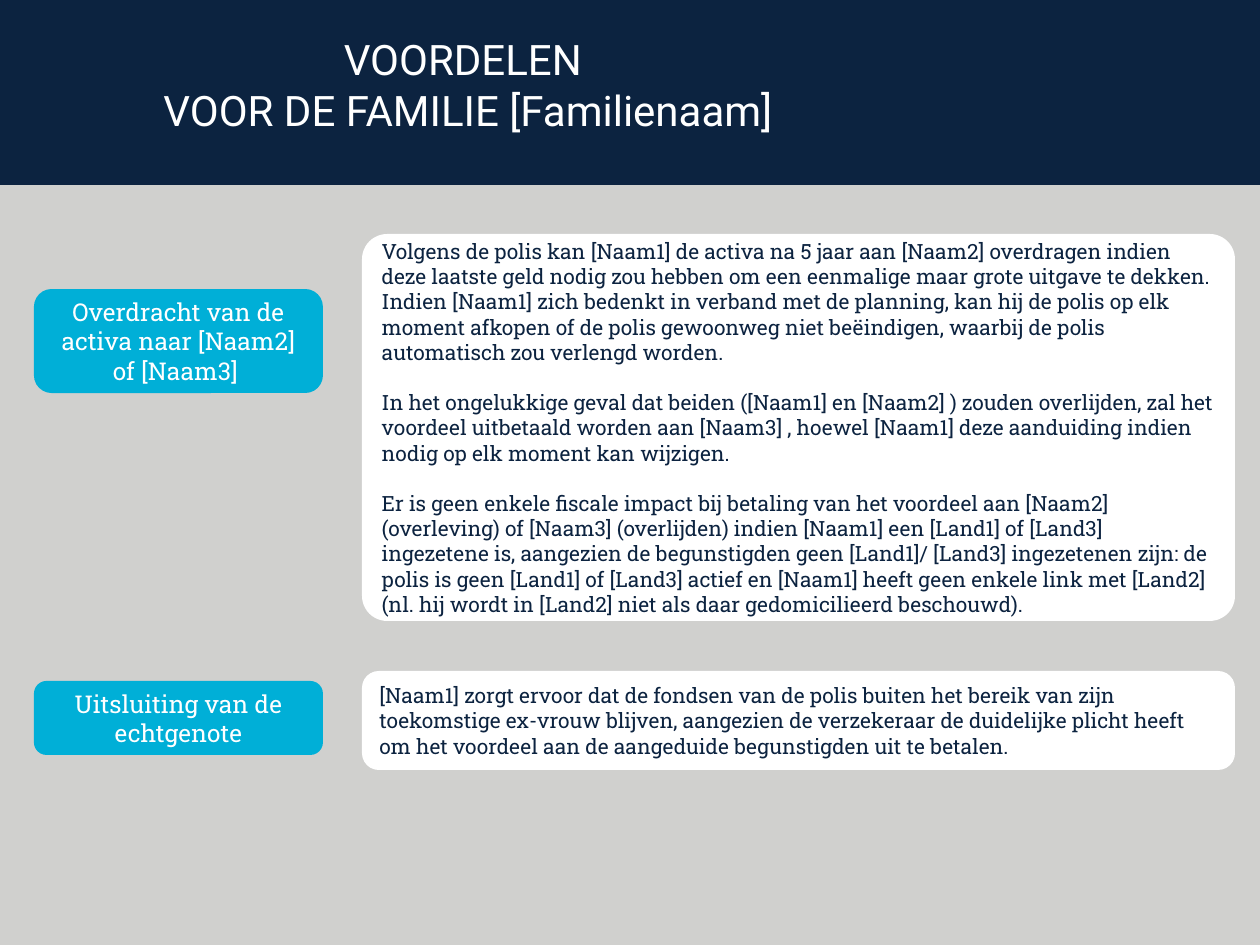
from dataclasses import dataclass

from pptx import Presentation
from pptx.dml.color import RGBColor
from pptx.enum.shapes import MSO_SHAPE
from pptx.enum.text import MSO_ANCHOR, PP_ALIGN
from pptx.util import Emu, Pt

RECTANGLE = MSO_SHAPE.RECTANGLE
ROUNDED = MSO_SHAPE.ROUNDED_RECTANGLE
MIDDLE, TOP = MSO_ANCHOR.MIDDLE, MSO_ANCHOR.TOP
LEFT, CENTER = PP_ALIGN.LEFT, PP_ALIGN.CENTER

EMU_PER_PX = 914400 / 126
COLORS = {
    "background": "D0D0CE",
    "navy": "0C2340",
    "cyan": "00AFD7",
    "white": "FFFFFF",
}
LABEL_LEFT, LABEL_WIDTH = 34, 289
DETAIL_LEFT, DETAIL_WIDTH = 362, 873
PARAGRAPH_GAP = 14.4


@dataclass(frozen=True)
class Box:
    top: int
    height: int
    paragraphs: tuple[str, ...]
    corner: float = 0.17


@dataclass(frozen=True)
class Benefit:
    label: Box
    detail: Box


BENEFITS = (
    Benefit(
        Box(289, 104, ("Overdracht van de activa naar [Naam2] of [Naam3] ",)),
        Box(
            234,
            387,
            (
                "Volgens de polis kan [Naam1] de activa na 5 jaar aan [Naam2] overdragen "
                "indien deze laatste geld nodig zou hebben om een eenmalige maar grote "
                "uitgave te dekken. Indien [Naam1] zich bedenkt in verband met de planning, "
                "kan hij de polis op elk moment afkopen of de polis gewoonweg niet "
                "beëindigen, waarbij de polis automatisch zou verlengd worden.",
                "In het ongelukkige geval dat beiden ([Naam1] en [Naam2] ) zouden overlijden, "
                "zal het voordeel uitbetaald worden aan [Naam3] , hoewel [Naam1] deze "
                "aanduiding indien nodig op elk moment kan wijzigen.",
                "Er is geen enkele fiscale impact bij betaling van het voordeel aan [Naam2] "
                "(overleving) of [Naam3] (overlijden) indien [Naam1] een [Land1] of [Land3] "
                "ingezetene is, aangezien de begunstigden geen [Land1]/ [Land3] ingezetenen "
                "zijn: de polis is geen [Land1] of [Land3] actief en [Naam1] heeft geen "
                "enkele link met [Land2] (nl. hij wordt in [Land2] niet als daar "
                "gedomicilieerd beschouwd).",
            ),
            0.065,
        ),
    ),
    Benefit(
        Box(681, 74, ("Uitsluiting van de echtgenote",)),
        Box(
            671,
            99,
            (
                "[Naam1] zorgt ervoor dat de fondsen van de polis buiten het bereik van "
                "zijn toekomstige ex-vrouw blijven, aangezien de verzekeraar de duidelijke "
                "plicht heeft om het voordeel aan de aangeduide begunstigden uit te betalen.",
            ),
        ),
    ),
)


def px(value: int) -> Emu:
    return Emu(round(value * EMU_PER_PX))


def color(name: str) -> RGBColor:
    return RGBColor.from_string(COLORS[name])


def add_panel(slide, kind, left: int, top: int, width: int, height: int, fill: str):
    shape = slide.shapes.add_shape(kind, px(left), px(top), px(width), px(height))
    shape.shadow.inherit = False
    shape.fill.solid()
    shape.fill.fore_color.rgb = color(fill)
    shape.line.fill.background()
    return shape


def write_text(shape, paragraphs: tuple[str, ...], font_name: str, size: int,
               text_color: str, alignment, anchor, gap: float = 0) -> None:
    frame = shape.text_frame
    frame.word_wrap = True
    frame.vertical_anchor = anchor
    frame.margin_top = frame.margin_bottom = 0
    for index, text in enumerate(paragraphs):
        paragraph = frame.add_paragraph() if index else frame.paragraphs[0]
        paragraph.text = text
        paragraph.alignment = alignment
        paragraph.line_spacing = 1.0
        paragraph.space_before = Pt(gap if index else 0)
        paragraph.font.name = font_name
        paragraph.font.size = Pt(size)
        paragraph.font.color.rgb = color(text_color)


def add_title(slide) -> None:
    title = slide.shapes.title
    title.left, title.top, title.width, title.height = px(0), px(34), px(936), px(140)
    write_text(title, ("VOORDELEN ", "VOOR DE FAMILIE [Familienaam]"),
               "Roboto", 24, "white", CENTER, TOP)


def add_benefit(slide, benefit: Benefit) -> None:
    label, detail = benefit.label, benefit.detail
    shape = add_panel(slide, ROUNDED, LABEL_LEFT, label.top, LABEL_WIDTH, label.height, "cyan")
    shape.adjustments[0] = label.corner
    write_text(shape, label.paragraphs, "Roboto Slab", 14, "white", CENTER, MIDDLE)
    shape = add_panel(slide, ROUNDED, DETAIL_LEFT, detail.top, DETAIL_WIDTH, detail.height, "white")
    shape.adjustments[0] = detail.corner
    write_text(shape, detail.paragraphs, "Roboto Slab", 12, "navy", LEFT, MIDDLE, PARAGRAPH_GAP)


def main() -> None:
    presentation = Presentation()
    presentation.slide_width, presentation.slide_height = px(1260), px(945)
    slide = presentation.slides.add_slide(presentation.slide_layouts[5])
    slide.background.fill.solid()
    slide.background.fill.fore_color.rgb = color("background")
    banner = add_panel(slide, RECTANGLE, 0, 0, 1260, 185, "navy")
    slide.shapes.title.element.addprevious(banner.element)
    add_title(slide)
    for benefit in BENEFITS:
        add_benefit(slide, benefit)
    presentation.save("out.pptx")


if __name__ == "__main__":
    main()
